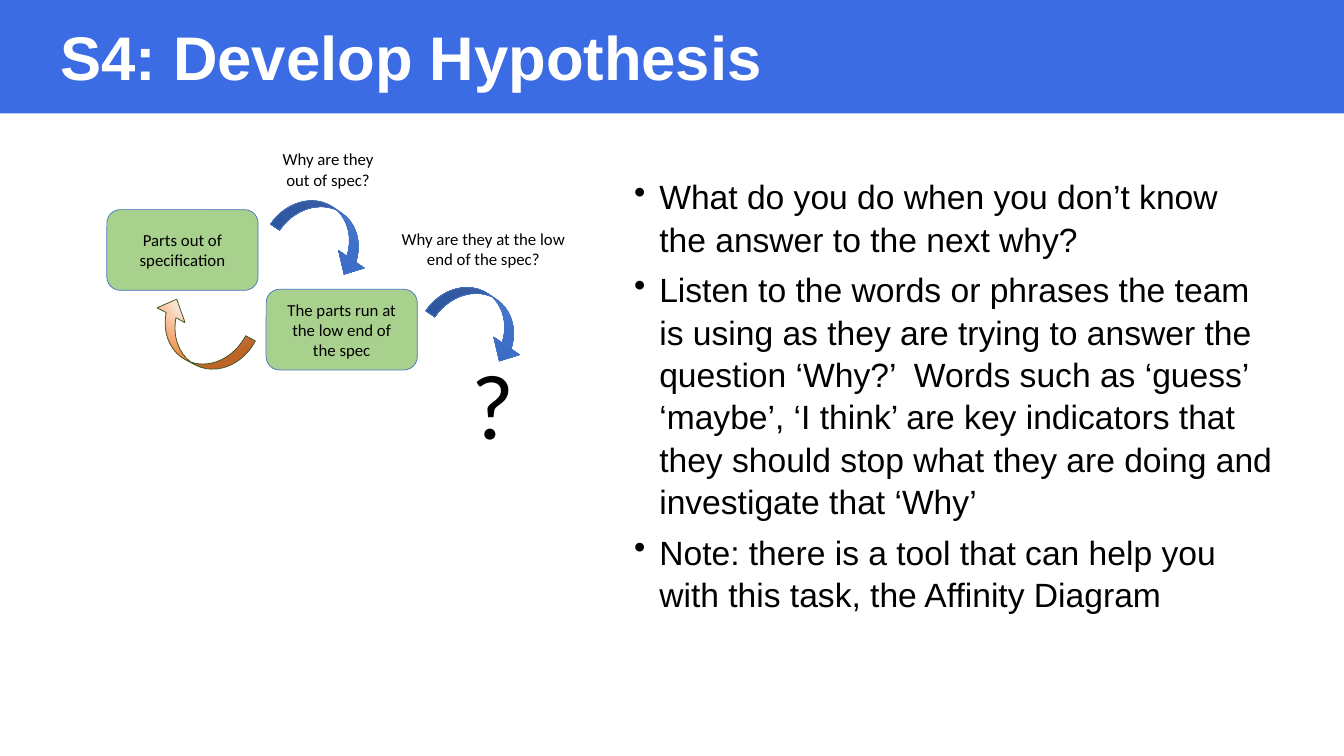
import pptx
import pptx.util
import pptx.oxml
import pptx.oxml.ns
from pptx.dml.color import RGBColor
from pptx.enum.shapes import MSO_SHAPE
from pptx.enum.text import MSO_ANCHOR, PP_ALIGN

WHITE = RGBColor(0xFF, 0xFF, 0xFF)
BLACK = RGBColor(0x00, 0x00, 0x00)
BAND_BLUE = RGBColor(0x3B, 0x6C, 0xE3)
LINE_BLUE = RGBColor(0x44, 0x72, 0xC4)
GREEN = RGBColor(0xA9, 0xD1, 0x8E)
DARK_GREEN = RGBColor(0x38, 0x57, 0x23)

prs = pptx.Presentation()
prs.slide_width = pptx.util.Inches(13.33)
prs.slide_height = pptx.util.Inches(7.5)
s = prs.slides.add_slide(prs.slide_layouts[6])


def at(left, top, width, height):
    """Turn percentages of the slide's width and height into lengths."""
    W, H = prs.slide_width, prs.slide_height
    return [pptx.util.Emu(round(share * side / 100))
            for share, side in ((left, W), (top, H), (width, W), (height, H))]


def write(sp, paragraphs, size=12, font="Calibri", color=BLACK, bold=False,
          align=PP_ALIGN.LEFT, anchor=MSO_ANCHOR.TOP, wrap=True,
          line_spacing=None, space_after=None, bullet=None):
    tf = sp.text_frame
    tf.word_wrap = wrap
    tf.vertical_anchor = anchor
    for i, words in enumerate(paragraphs):
        p = tf.add_paragraph() if i else tf.paragraphs[0]
        p.alignment = align
        if line_spacing:
            p.line_spacing = line_spacing
        if space_after:
            p.space_after = pptx.util.Pt(space_after)
        if bullet:
            pPr = p._p.get_or_add_pPr()
            indent = pptx.util.Inches(0.25)
            pPr.set("marL", str(indent))
            pPr.set("indent", str(-indent))
            pPr.append(pptx.oxml.parse_xml(
                f'<a:buChar {pptx.oxml.ns.nsdecls("a")} char="{bullet}"/>'))
        r = p.add_run()
        r.text = words
        r.font.size = pptx.util.Pt(size)
        r.font.name = font
        r.font.color.rgb = color
        r.font.bold = bold


# Title band
band = s.shapes.add_shape(MSO_SHAPE.RECTANGLE, *at(0, 0, 100, 15))
band.shadow.inherit = False
band.fill.solid()
band.fill.fore_color.rgb = BAND_BLUE
band.line.fill.background()
title = s.shapes.add_textbox(*at(3.75, 2.67, 66.1, 10.67))
write(title, ["S4: Develop Hypothesis"], size=44, font="Arial", color=WHITE,
      bold=True, anchor=MSO_ANCHOR.MIDDLE, line_spacing=0.9)

# Findings, stepping down to the right
findings = ["Parts out of specification", "The parts run at the low end of the spec"]
for i, finding in enumerate(findings):
    sp = s.shapes.add_shape(MSO_SHAPE.ROUNDED_RECTANGLE,
                            *at(7.95 + 11.85 * i, 27.73 + 10.54 * i, 11.25, 10.67))
    sp.shadow.inherit = False
    sp.fill.solid()
    sp.fill.fore_color.rgb = GREEN
    sp.line.color.rgb = LINE_BLUE
    sp.line.width = pptx.util.Pt(0.5)
    write(sp, [finding], align=PP_ALIGN.CENTER, anchor=MSO_ANCHOR.MIDDLE)

# Curved arrows: two whys going down, one going back up
blue_stops = [(0, "6183CB"), (50, "3E70CA"), (100, "3062BB")]
orange_stops = [(0, "FFFFFF"), (16, "FFFFFF"), (100, "ED7D31")]
downward = '<a:lin ang="5400000" scaled="0"/>'
radial = ('<a:path path="circle"><a:fillToRect l="50000" t="-80000" '
          'r="50000" b="180000"/></a:path>')
arrows = [
    (20.48, 27.6, 34.3, LINE_BLUE, blue_stops, downward),
    (10.8, 41.47, 207.9, DARK_GREEN, orange_stops, radial),
    (32.03, 39.07, 34.3, LINE_BLUE, blue_stops, downward),
]
for left, top, angle, outline, stops, direction in arrows:
    sp = s.shapes.add_shape(MSO_SHAPE.CURVED_DOWN_ARROW, *at(left, top, 7.8, 6.53))
    sp.shadow.inherit = False
    sp.rotation = angle
    for i, value in enumerate((0.223, 0.638, 0.338)):
        sp.adjustments[i] = value
    sp.line.color.rgb = outline
    sp.line.width = pptx.util.Pt(0.5)
    gs = "".join(f'<a:gs pos="{pos * 1000}"><a:srgbClr val="{c}"/></a:gs>'
                 for pos, c in stops)
    spPr = sp._element.spPr
    geometry = spPr.find(pptx.oxml.ns.qn("a:prstGeom"))
    geometry.addnext(pptx.oxml.parse_xml(
        f'<a:gradFill {pptx.oxml.ns.nsdecls("a")} rotWithShape="1">'
        f'<a:gsLst>{gs}</a:gsLst>{direction}</a:gradFill>'))

# Questions above the arrows
first_why = s.shapes.add_textbox(*at(20.25, 19.07, 8.33, 6.67))
write(first_why, ["Why are they", "out of spec?"], align=PP_ALIGN.CENTER, wrap=False)
second_why = s.shapes.add_textbox(*at(29.1, 29.6, 13.73, 5.33))
write(second_why, ["Why are they at the low end of the spec?"], align=PP_ALIGN.CENTER)
unknown = s.shapes.add_textbox(*at(34.36, 45.2, 4.73, 16.13))
write(unknown, ["?"], size=66, wrap=False)

# Advice
advice = s.shapes.add_textbox(*at(46.44, 22.4, 49.06, 59.87))
write(advice, [
    "What do you do when you don’t know the answer to the next why?",
    "Listen to the words or phrases the team is using as they are trying to answer "
    "the question ‘Why?’  Words such as ‘guess’ ‘maybe’, ‘I think’ are key indicators "
    "that they should stop what they are doing and investigate that ‘Why’",
    "Note: there is a tool that can help you with this task, the Affinity Diagram",
], size=24, font="Arial", line_spacing=1.05, space_after=6, bullet="•")

prs.save("out.pptx")
